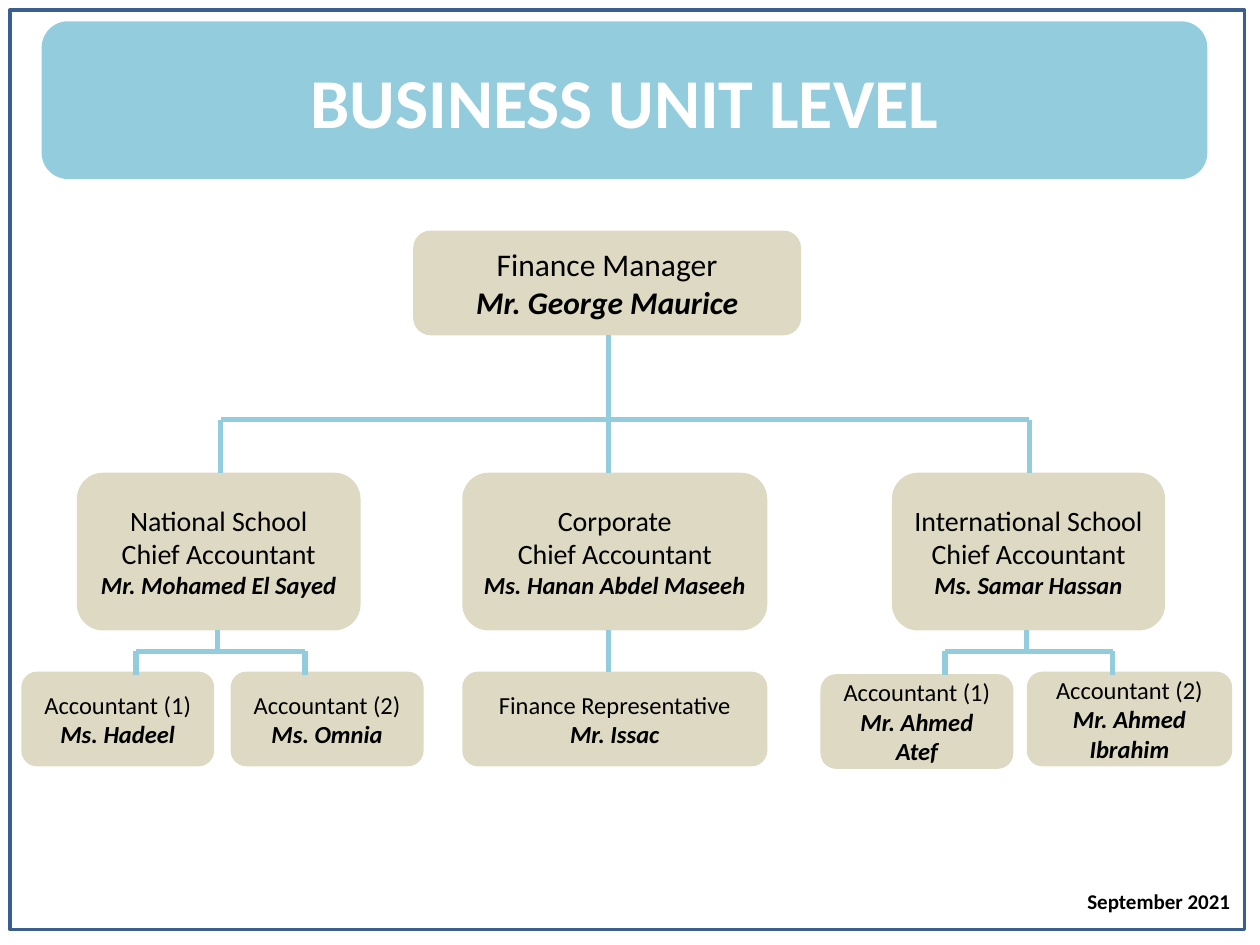
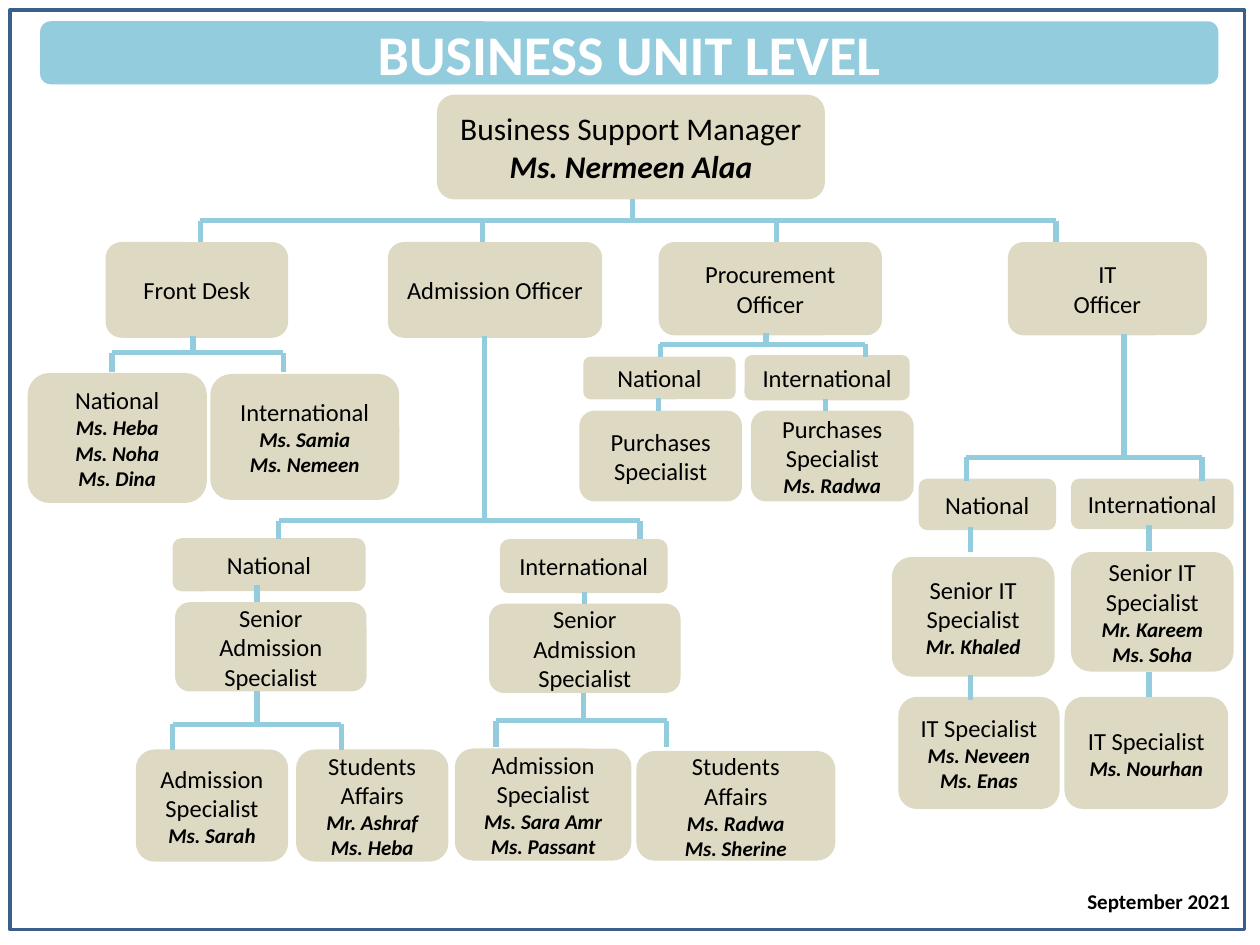
from lxml import etree
from pptx import Presentation
from pptx.dml.color import RGBColor
from pptx.enum.shapes import MSO_CONNECTOR, MSO_SHAPE
from pptx.enum.text import MSO_ANCHOR, MSO_AUTO_SIZE, PP_ALIGN
from pptx.oxml.ns import qn
from pptx.util import Cm, Pt

RECTANGLE = MSO_SHAPE.RECTANGLE
ROUNDED = MSO_SHAPE.ROUNDED_RECTANGLE
STRAIGHT = MSO_CONNECTOR.STRAIGHT
MIDDLE = MSO_ANCHOR.MIDDLE
CENTER = PP_ALIGN.CENTER

SKY = RGBColor(0x93, 0xCD, 0xDD)
SAND = RGBColor(0xDD, 0xD9, 0xC3)
NAVY = RGBColor(0x3A, 0x5F, 0x8C)
BLACK = RGBColor(0, 0, 0)
WHITE = RGBColor(0xFF, 0xFF, 0xFF)
FONT = "Calibri"
TITLE = "BUSINESS UNIT LEVEL"
ISSUE_DATE = "September 2021"

# Boxes, in cm: left, top, width, height, role lines, names.
# They are grouped by the point sizes of role and names.
# Branches, in cm: trunk x, trunk top, bar y, drop positions, drop bottom.
# Links, in cm: x, top, bottom.
FINANCE = {
    "band": (0.84, 0.43, 23.5, 3.18),
    "title_size": 40,
    "boxes": {
        (18, 18): [
            (8.33, 4.65, 7.82, 2.11, ["Finance Manager"], ["Mr. George Maurice"]),
        ],
        (16, 14): [
            (1.55, 9.53, 5.72, 3.18, ["National School", "Chief Accountant"],
             ["Mr. Mohamed El Sayed"]),
            (9.32, 9.53, 6.15, 3.18, ["Corporate", "Chief Accountant"],
             ["Ms. Hanan Abdel Maseeh"]),
            (17.98, 9.53, 5.51, 3.18, ["International School", "Chief Accountant"],
             ["Ms. Samar Hassan"]),
        ],
        (14, 14): [
            (0.43, 13.54, 3.89, 1.91, ["Accountant (1)"], ["Ms. Hadeel"]),
            (4.65, 13.54, 3.89, 1.91, ["Accountant (2)"], ["Ms. Omnia"]),
            (9.32, 13.54, 6.15, 1.91, ["Finance Representative"], ["Mr. Issac"]),
            (16.54, 13.59, 3.89, 1.91, ["Accountant (1)"], ["Mr. Ahmed Atef"]),
            (20.7, 13.54, 4.14, 1.91, ["Accountant (2)"], ["Mr. Ahmed Ibrahim"]),
        ],
    },
    "branches": [
        (12.27, 6.76, 8.46, [4.45, 12.27, 20.75], 9.53),
        (4.39, 12.7, 13.13, [2.74, 6.15], 13.6),
        (20.7, 12.7, 13.13, [19.05, 22.43], 13.6),
    ],
    "links": [(12.27, 12.7, 13.54)],
}
SUPPORT = {
    "band": (0.81, 0.43, 23.75, 1.27),
    "title_size": 32,
    "boxes": {
        (18, 18): [
            (8.81, 1.91, 7.82, 2.11, ["Business Support Manager"],
             ["Ms. Nermeen Alaa"]),
        ],
        (14, 12): [
            (2.13, 4.88, 3.68, 1.93, ["Front Desk"], []),
            (7.82, 4.88, 4.32, 1.93, ["Admission Officer"], []),
            (13.28, 4.88, 4.5, 1.88, ["Procurement", "Officer"], []),
            (20.32, 4.88, 4.01, 1.88, ["IT", "Officer"], []),
            # Front desk
            (0.56, 7.52, 3.61, 2.62, ["National"],
             ["Ms. Heba", "Ms. Noha", "Ms. Dina"]),
            (4.24, 7.54, 3.81, 2.54, ["International"], ["Ms. Samia", "Ms. Nemeen"]),
            # Admission
            (3.48, 10.85, 3.89, 1.07, ["National"], []),
            (10.08, 10.87, 3.38, 1.09, ["International"], []),
            (3.53, 12.14, 3.86, 1.8, ["Senior Admission Specialist"], []),
            (9.86, 12.17, 3.86, 1.8, ["Senior Admission Specialist"], []),
            (2.74, 15.11, 3.07, 2.26, ["Admission", "Specialist"], ["Ms. Sarah"]),
            (5.97, 15.11, 3.07, 2.26, ["Students", "Affairs"],
             ["Mr. Ashraf", "Ms. Heba"]),
            (9.17, 15.09, 3.56, 2.26, ["Admission", "Specialist"],
             ["Ms. Sara Amr", "Ms. Passant"]),
            (12.83, 15.14, 4.01, 2.21, ["Students", "Affairs"],
             ["Ms. Radwa", "Ms. Sherine"]),
            # Procurement
            (11.76, 7.19, 3.07, 0.86, ["National"], []),
            (15.01, 7.16, 3.33, 0.91, ["International"], []),
            (11.68, 8.28, 3.28, 1.83, ["Purchases Specialist"], []),
            (15.14, 8.28, 3.28, 1.83, ["Purchases Specialist"], ["Ms. Radwa"]),
            # IT
            (18.52, 9.65, 2.77, 1.04, ["National"], []),
            (21.59, 9.65, 3.28, 1.02, ["International"], []),
            (17.98, 11.23, 3.28, 2.41, ["Senior IT Specialist"], ["Mr. Khaled"]),
            (21.59, 11.13, 3.28, 2.41, ["Senior IT Specialist"],
             ["Mr. Kareem", "Ms. Soha"]),
            (18.11, 14.05, 3.25, 2.26, ["IT Specialist"], ["Ms. Neveen", "Ms. Enas"]),
            (21.46, 14.05, 3.3, 2.26, ["IT Specialist"], ["Ms. Nourhan"]),
        ],
    },
    "branches": [
        (12.75, 4.01, 4.45, [4.04, 9.73, 15.65, 21.29], 4.88),
        (3.89, 6.78, 7.11, [2.26, 5.71], 7.5),
        (9.76, 6.78, 10.5, [5.62, 12.9], 10.87),
        (15.44, 6.71, 6.94, [13.31, 17.44], 7.19),
        (22.66, 6.73, 9.22, [19.48, 24.23], 9.7),
        (5.18, 13.92, 14.6, [3.48, 6.88], 15.11),
        (11.76, 13.97, 14.53, [10, 13.44], 15.06),
    ],
    "links": [
        (5.18, 11.79, 12.14), (11.79, 11.94, 12.17),
        (13.28, 8.03, 8.28), (16.64, 8.05, 8.28),
        (19.56, 10.62, 11.13), (19.56, 13.61, 14.12),
        (23.16, 10.59, 11.1), (23.16, 13.54, 14.05),
    ],
}


def add_box(slide, kind, bounds, fill):
    """Add an unlined, unshadowed shape; bounds are in cm."""
    shape = slide.shapes.add_shape(kind, *map(Cm, bounds))
    shape.shadow.inherit = False
    shape.line.fill.background()
    if fill is None:
        shape.fill.background()
    else:
        shape.fill.solid()
        shape.fill.fore_color.rgb = fill
    return shape


def add_line(slide, x1, y1, x2, y2):
    connector = slide.shapes.add_connector(STRAIGHT, Cm(x1), Cm(y1), Cm(x2), Cm(y2))
    connector.line.color.rgb = SKY
    connector.line.width = Pt(3)
    etree.SubElement(connector.element.spPr, qn("a:effectLst"))


presentation = Presentation()
presentation.slide_width = Cm(25.4)
presentation.slide_height = Cm(19.05)
title_only = presentation.slide_layouts[5]

for chart in (FINANCE, SUPPORT):
    slide = presentation.slides.add_slide(title_only)

    frame = add_box(slide, RECTANGLE, (0.2, 0.2, 24.89, 18.54), None)
    frame.line.color.rgb = NAVY
    frame.line.width = Pt(2)

    # The title lies on its band, so it moves to the front.
    add_box(slide, ROUNDED, chart["band"], SKY)
    title = slide.shapes.title
    slide.shapes.element.append(title.element)
    title.left, title.top, title.width, title.height = map(Cm, chart["band"])
    title.text_frame.text = TITLE
    title.text_frame.auto_size = MSO_AUTO_SIZE.NONE
    title.text_frame.vertical_anchor = MIDDLE
    paragraph = title.text_frame.paragraphs[0]
    paragraph.alignment = CENTER
    paragraph.font.name = FONT
    paragraph.font.size = Pt(chart["title_size"])
    paragraph.font.bold = True
    paragraph.font.color.rgb = WHITE

    for (role_size, name_size), boxes in chart["boxes"].items():
        for *bounds, roles, names in boxes:
            text_frame = add_box(slide, ROUNDED, bounds, SAND).text_frame
            text_frame.word_wrap = True
            text_frame.vertical_anchor = MIDDLE
            text_frame.text = "\n".join(roles + names)
            for index, paragraph in enumerate(text_frame.paragraphs):
                is_name = index >= len(roles)
                paragraph.alignment = CENTER
                paragraph.font.name = FONT
                paragraph.font.size = Pt(name_size if is_name else role_size)
                paragraph.font.bold = is_name
                paragraph.font.italic = is_name
                paragraph.font.color.rgb = BLACK

    for trunk, top, bar, drops, bottom in chart["branches"]:
        add_line(slide, trunk, top, trunk, bar)
        add_line(slide, drops[0], bar, drops[-1], bar)
        for drop in drops:
            add_line(slide, drop, bar, drop, bottom)
    for x, top, bottom in chart["links"]:
        add_line(slide, x, top, x, bottom)

    date_box = slide.shapes.add_textbox(Cm(21.67), Cm(17.78), Cm(3.43), Cm(1.27))
    date_box.text_frame.word_wrap = False
    date_box.text_frame.text = ISSUE_DATE
    paragraph = date_box.text_frame.paragraphs[0]
    paragraph.font.name = FONT
    paragraph.font.size = Pt(12)
    paragraph.font.bold = True
    paragraph.font.color.rgb = BLACK

presentation.save("out.pptx")
